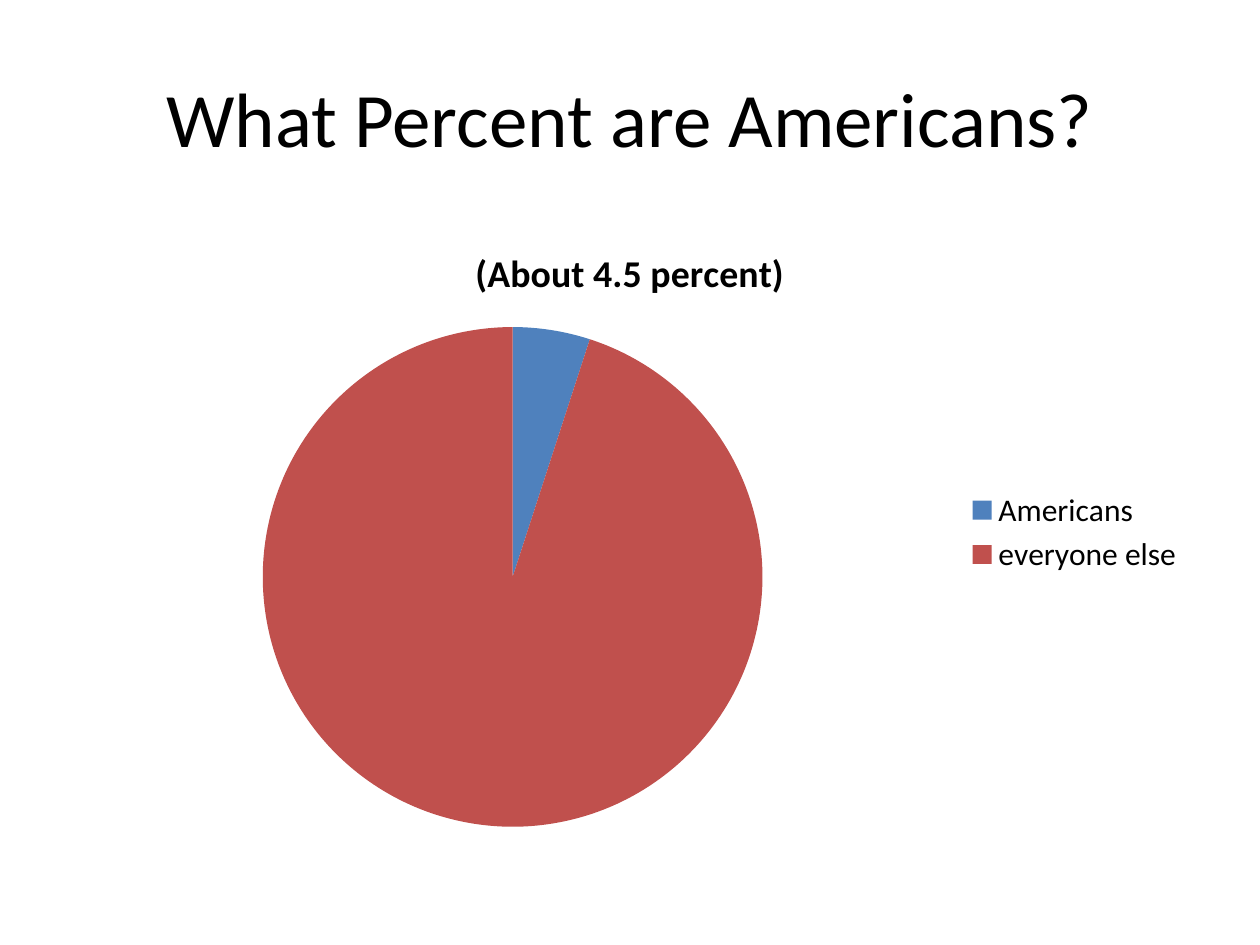
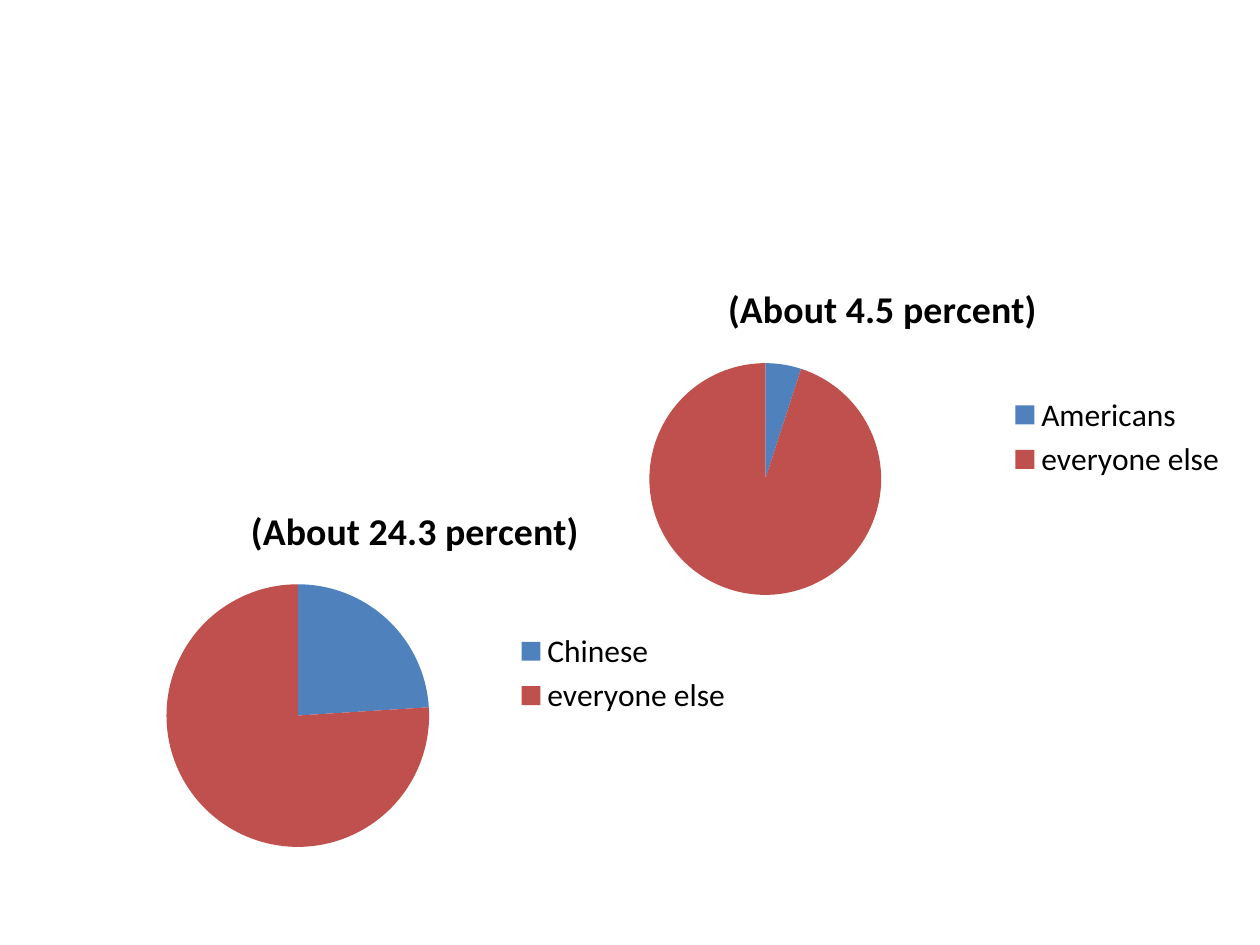
"""Build two slides of pie charts showing shares of the world population."""
import pptx
import pptx.chart.data
import pptx.dml.color
import pptx.enum.chart
import pptx.enum.text
import pptx.util

Inches = pptx.util.Inches
Pt = pptx.util.Pt
RGBColor = pptx.dml.color.RGBColor

BLACK = RGBColor(0x00, 0x00, 0x00)
BLUE = RGBColor(0x4F, 0x81, 0xBD)
RED = RGBColor(0xC0, 0x50, 0x4D)
FONT = "Calibri"
TITLE_ONLY, BLANK = 5, 6


def set_font(font, size):
    """Apply the shared typeface and colour at the given size."""
    font.name = FONT
    font.size = Pt(size)
    font.color.rgb = BLACK


def add_title(s, text):
    """Place and format the slide title."""
    title = s.shapes.title
    title.left, title.top = Inches(0.5), Inches(0.3)
    title.width, title.height = Inches(9), Inches(1.25)
    tf = title.text_frame
    tf.text = text
    tf.vertical_anchor = pptx.enum.text.MSO_ANCHOR.MIDDLE
    p = tf.paragraphs[0]
    p.alignment = pptx.enum.text.PP_ALIGN.CENTER
    set_font(p.font, 44)


def add_share_pie(s, group, share, caption, left, top, width, height):
    """Add a captioned pie of one group's share against everyone else."""
    data = pptx.chart.data.CategoryChartData()
    data.categories = [group, "everyone else"]
    data.add_series("Series 1", [share, 100 - share])
    chart = s.shapes.add_chart(
        pptx.enum.chart.XL_CHART_TYPE.PIE,
        Inches(left), Inches(top), Inches(width), Inches(height), data).chart
    set_font(chart.font, 18)

    chart.has_title = True
    chart.chart_title.text_frame.text = caption

    chart.has_legend = True
    chart.legend.position = pptx.enum.chart.XL_LEGEND_POSITION.RIGHT
    chart.legend.include_in_layout = False

    plot = chart.plots[0]
    plot.vary_by_categories = True
    for i, color in enumerate((BLUE, RED)):
        fill = plot.series[0].points[i].format.fill
        fill.solid()
        fill.fore_color.rgb = color


def main():
    """Build and save the presentation."""
    prs = pptx.Presentation()
    prs.slide_width, prs.slide_height = Inches(10), Inches(7.5)
    americans = ("Americans", 5, "(About 4.5 percent)")
    chinese = ("Chinese", 24, "(About 24.3 percent)")

    s = prs.slides.add_slide(prs.slide_layouts[TITLE_ONLY])
    add_title(s, "What Percent are Americans?")
    add_share_pie(s, *americans, 0.5, 1.75, 9, 4.95)

    s = prs.slides.add_slide(prs.slide_layouts[BLANK])
    add_share_pie(s, *chinese, 0.67, 3.83, 5.25, 3.03)
    add_share_pie(s, *americans, 4.17, 2.08, 5.67, 2.78)

    prs.save("out.pptx")


if __name__ == "__main__":
    main()
